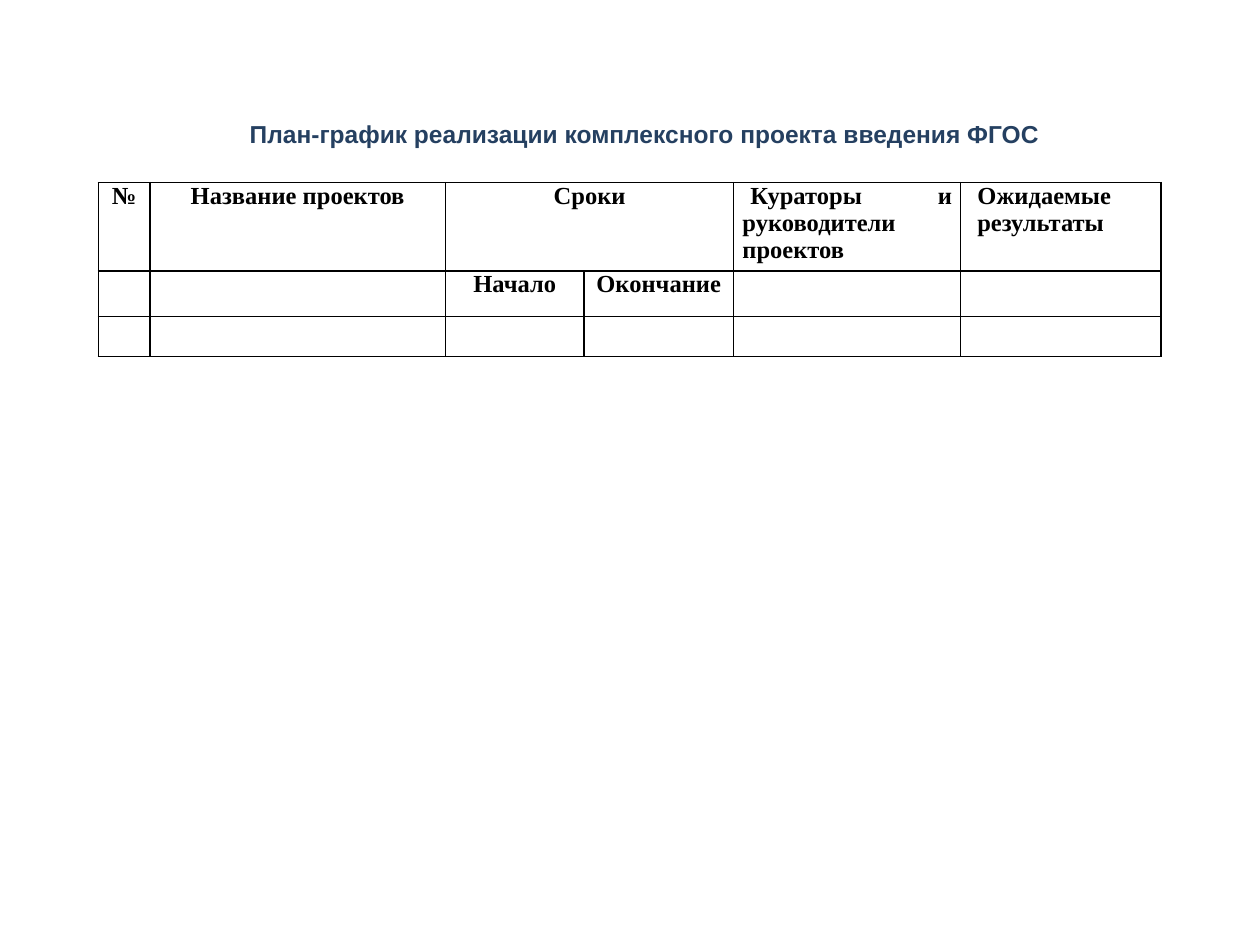
from lxml.etree import SubElement
from pptx import Presentation
from pptx.dml.color import RGBColor
from pptx.enum.text import MSO_ANCHOR, MSO_AUTO_SIZE, PP_ALIGN
from pptx.oxml.ns import qn
from pptx.util import Pt

NAVY = RGBColor(0x25, 0x40, 0x61)
BLACK = RGBColor(0, 0, 0)

TITLE = "План-график реализации комплексного проекта введения ФГОС"
COLUMN_WIDTHS = [29.4, 169.1, 78.9, 85.7, 129.7, 114.6]
ROW_HEIGHTS = [50.3, 26.2, 22.8]
ROWS = [
    ["№", "Название проектов", "Сроки", "",
     "Кураторы и руководители проектов", "Ожидаемые\nрезультаты"],
    ["", "", "Начало", "Окончание", "", ""],
    [""] * 6,
]
JUSTIFIED_COLUMNS = (4, 5)


def set_attributes(target, values):
    for name, value in values.items():
        setattr(target, name, value)


class PlanSlide:
    title_font = {"name": "Arial", "size": Pt(14), "bold": True}
    cell_font = {"name": "Times New Roman", "size": Pt(14), "bold": True}
    cell_format = {"margin_left": Pt(5), "margin_right": Pt(5),
                   "margin_top": 0, "margin_bottom": 0,
                   "vertical_anchor": MSO_ANCHOR.TOP}
    border_width = Pt(1)

    def __init__(self, slide):
        self.slide = slide

    def fill_text(self, text_frame, text, font, color, alignment, indent=0):
        text_frame.text = text
        for paragraph in text_frame.paragraphs:
            paragraph.alignment = alignment
            properties = paragraph._p.get_or_add_pPr()
            properties.set("marL", "0")
            properties.set("indent", str(Pt(indent)))
            for run in paragraph.runs:
                set_attributes(run.font, font)
                run.font.color.rgb = color

    def add_title(self, text, left, top, width, height):
        title = self.slide.shapes.title
        set_attributes(title, {"left": Pt(left), "top": Pt(top),
                               "width": Pt(width), "height": Pt(height)})
        set_attributes(title.text_frame, {
            "word_wrap": False, "auto_size": MSO_AUTO_SIZE.SHAPE_TO_FIT_TEXT,
            "vertical_anchor": MSO_ANCHOR.MIDDLE})
        self.fill_text(title.text_frame, text, self.title_font, NAVY,
                       PP_ALIGN.CENTER, indent=18)

    def add_borders(self, cell):
        properties = cell._tc.get_or_add_tcPr()
        for side in ("a:lnL", "a:lnR", "a:lnT", "a:lnB"):
            line = SubElement(properties, qn(side), w=str(self.border_width))
            fill = SubElement(line, qn("a:solidFill"))
            SubElement(fill, qn("a:srgbClr"), val=str(BLACK))

    def add_table(self, rows, left, top):
        table = self.slide.shapes.add_table(
            len(rows), len(COLUMN_WIDTHS), Pt(left), Pt(top),
            Pt(sum(COLUMN_WIDTHS)), Pt(sum(ROW_HEIGHTS))).table
        set_attributes(table, {"first_row": False, "horz_banding": False})
        for column, width in zip(table.columns, COLUMN_WIDTHS):
            column.width = Pt(width)
        for row, height in zip(table.rows, ROW_HEIGHTS):
            row.height = Pt(height)
        for row, texts in zip(table.rows, rows):
            for index, (cell, text) in enumerate(zip(row.cells, texts)):
                set_attributes(cell, self.cell_format)
                self.add_borders(cell)
                cell.fill.background()
                justified = index in JUSTIFIED_COLUMNS
                self.fill_text(cell.text_frame, text, self.cell_font, BLACK,
                               PP_ALIGN.JUSTIFY if justified else PP_ALIGN.CENTER,
                               indent=4.5 if justified else 0)
        return table


def main():
    presentation = Presentation()
    set_attributes(presentation, {"slide_width": Pt(720), "slide_height": Pt(540)})
    title_only = presentation.slide_layouts[5]
    plan = PlanSlide(presentation.slides.add_slide(title_only))
    plan.add_title(TITLE, 116, 64.2, 486.7, 24.4)
    table = plan.add_table(ROWS, 56.2, 104.3)
    table.cell(0, 2).merge(table.cell(0, 3))
    presentation.save("out.pptx")


if __name__ == "__main__":
    main()
